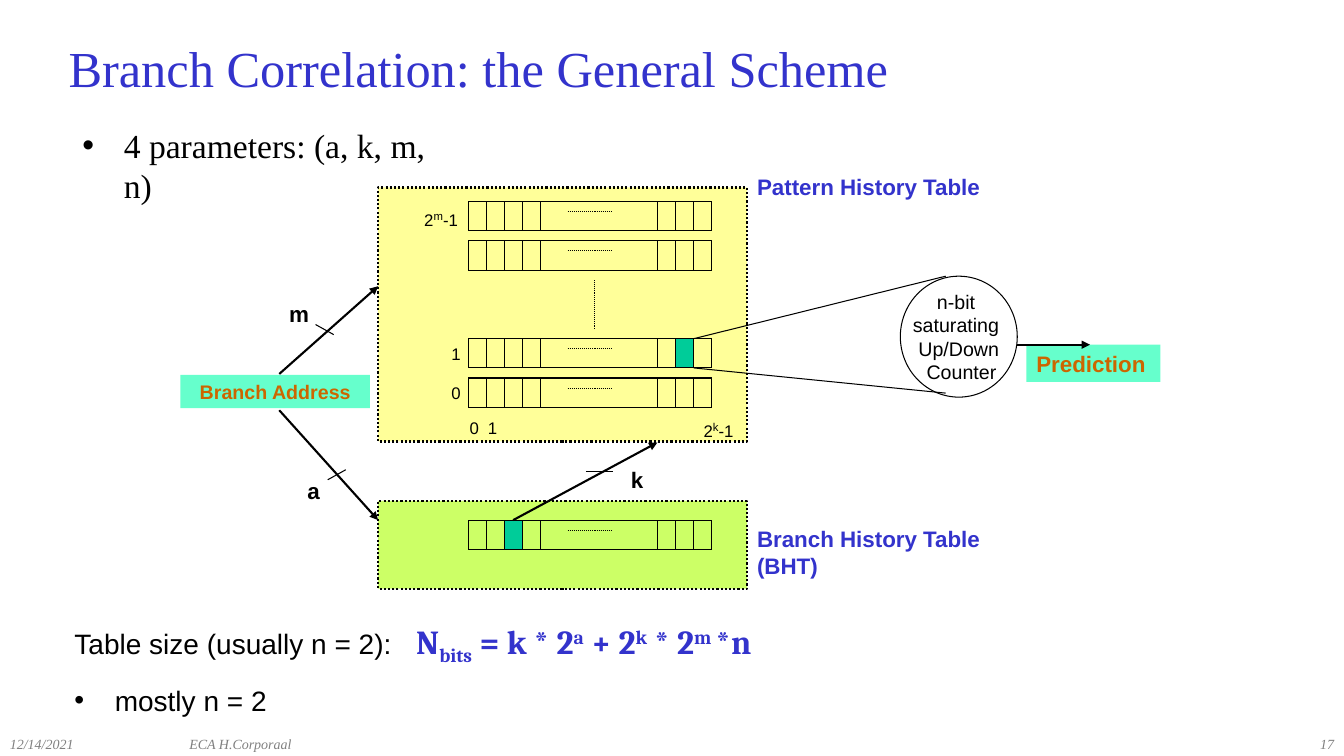
from collections import namedtuple
from lxml.etree import SubElement
from pptx import Presentation
from pptx.dml.color import RGBColor
from pptx.enum.dml import MSO_LINE
from pptx.enum.shapes import MSO_CONNECTOR, MSO_SHAPE
from pptx.enum.text import MSO_ANCHOR, PP_ALIGN
from pptx.oxml.ns import qn
from pptx.util import Inches, Pt

Box = namedtuple("Box", "left top width height")
BLACK, BLUE, GRAY, ORANGE = "000000", "3333CC", "808080", "CC6600"
YELLOW, LIME, MINT, GREEN = "FFFF99", "CCFF66", "66FFCC", "00CC99"
ROW_WIDTH, ROW_HEIGHT = 2.41, 0.29
CELL_WIDTH = ROW_WIDTH / 13.5
CELL_OFFSETS = [CELL_WIDTH * index for index in (0, 1, 2, 3, 10.5, 11.5, 12.5)]


def color(value):
    return RGBColor.from_string(value)


def style_run(run, size, name="Arial", hue=BLACK, bold=False, italic=False, baseline=0):
    font = run.font
    font.size, font.name, font.bold, font.italic = Pt(size), name, bold, italic
    font.color.rgb = color(hue)
    if baseline:
        run._r.get_or_add_rPr().set("baseline", str(baseline * 1000))


def add_runs(paragraph, parts, size, baseline_size=None, **style):
    for text, baseline in parts:
        run = paragraph.add_run()
        run.text = text
        run_size = baseline_size if baseline and baseline_size else size
        style_run(run, run_size, baseline=baseline, **style)


def add_bullet(paragraph, margin):
    properties = paragraph._p.get_or_add_pPr()
    properties.set("marL", str(Inches(margin)))
    properties.set("indent", str(-Inches(margin)))
    SubElement(properties, qn("a:buFont"), typeface="Arial")
    SubElement(properties, qn("a:buChar"), char="•")


def add_text(slide, box, parts, size, align=PP_ALIGN.LEFT, **style):
    text_box = slide.shapes.add_textbox(*map(Inches, box))
    text_frame = text_box.text_frame
    text_frame.word_wrap = True
    paragraph = text_frame.paragraphs[0]
    paragraph.alignment = align
    if isinstance(parts, str):
        parts = [(parts, 0)]
    add_runs(paragraph, parts, size, **style)
    return text_frame


def add_block(slide, box, fill=None, line_width=0.75, dash=None, kind=MSO_SHAPE.RECTANGLE):
    shape = slide.shapes.add_shape(kind, *map(Inches, box))
    shape.shadow.inherit = False
    if fill:
        shape.fill.solid()
        shape.fill.fore_color.rgb = color(fill)
    else:
        shape.fill.background()
    if line_width:
        shape.line.color.rgb = color(BLACK)
        shape.line.width = Pt(line_width)
        shape.line.dash_style = dash
    else:
        shape.line.fill.background()
    return shape


def add_line(slide, start, end, width=0.75, dash=None, arrow=False):
    points = map(Inches, (*start, *end))
    connector = slide.shapes.add_connector(MSO_CONNECTOR.STRAIGHT, *points)
    connector.line.color.rgb = color(BLACK)
    connector.line.width = Pt(width)
    connector.line.dash_style = dash
    if arrow:
        SubElement(connector.line._get_or_add_ln(), qn("a:tailEnd"), type="triangle")
    SubElement(connector._element.spPr, qn("a:effectLst"))


def add_tag(slide, box, text, size, align=PP_ALIGN.LEFT):
    tag = add_block(slide, box, MINT, line_width=0)
    tag.text_frame.text = text
    paragraph = tag.text_frame.paragraphs[0]
    paragraph.alignment = align
    style_run(paragraph.runs[0], size, hue=ORANGE, bold=True)


def add_row(slide, left, top, marked=None):
    for index, offset in enumerate(CELL_OFFSETS):
        fill = GREEN if index == marked else None
        add_block(slide, Box(left + offset, top, CELL_WIDTH, ROW_HEIGHT), fill)
    add_block(slide, Box(left, top, ROW_WIDTH, ROW_HEIGHT))
    dots = top + 0.1
    add_line(slide, (left + 0.98, dots), (left + 1.43, dots), dash=MSO_LINE.ROUND_DOT)


def add_title(slide, box):
    title = slide.shapes.title
    title.left, title.top, title.width, title.height = map(Inches, box)
    title.text_frame.text = "Branch Correlation: the General Scheme"
    title.text_frame.vertical_anchor = MSO_ANCHOR.MIDDLE
    paragraph = title.text_frame.paragraphs[0]
    paragraph.alignment = PP_ALIGN.LEFT
    style_run(paragraph.runs[0], 36, "Times New Roman", BLUE)


def add_footer(slide, box):
    style = dict(size=10, name="Times New Roman", hue=GRAY, italic=True)
    left, top, width, height = box
    add_text(slide, Box(left, top, 1.78, height), "12/14/2021", **style)
    add_text(slide, Box(left + 1.78, top, 4.22, height), "ECA H.Corporaal", **style)
    number = Box(left + width - 2.78, top, 2.78, height)
    add_text(slide, number, "17", align=PP_ALIGN.RIGHT, **style)


def add_parameters(slide, box):
    text_frame = add_text(slide, box, "4 parameters: (a, k, m, n)", 24, name="Times New Roman")
    add_bullet(text_frame.paragraphs[0], 0.41)


def add_table_size(slide, box):
    text_frame = add_text(slide, box, "Table size (usually n = 2):\t", 20)
    formula = text_frame.paragraphs[0]
    tabs = SubElement(formula._p.get_or_add_pPr(), qn("a:tabLst"))
    SubElement(tabs, qn("a:tab"), pos=str(Inches(3.39)), algn="l")
    parts = [("N", 0), ("bits", -25), (" = k * 2", 0), ("a", 30), (" + 2", 0),
             ("k", 30), (" * 2", 0), ("m ", 30), ("*n", 0)]
    add_runs(formula, parts, 24, name="Cambria", hue=BLUE, bold=True)
    remark = text_frame.add_paragraph()
    remark.text = "mostly n = 2"
    remark.space_before = Pt(12)
    style_run(remark.runs[0], 20)
    add_bullet(remark, 0.4)


def add_history_table(slide, box):
    left, top, width, height = box
    add_block(slide, box, LIME, 1.5, MSO_LINE.ROUND_DOT)
    add_row(slide, left + 0.9, top + 0.19, marked=2)
    label = Box(left + width, top + 0.19, 2.95, 0.64)
    add_text(slide, label, "Branch History Table (BHT)", 16, hue=BLUE, bold=True)


def add_pattern_table(slide, box):
    left, top, width, height = box
    add_block(slide, box, YELLOW, 1.5, MSO_LINE.ROUND_DOT)
    for offset, marked in ((0.14, None), (0.53, None), (1.5, 5), (1.89, None)):
        add_row(slide, left + 0.9, top + offset, marked)
    middle = left + 2.15
    add_line(slide, (middle, top + 1.4), (middle, top + 0.92), dash=MSO_LINE.ROUND_DOT)
    dots = top + 1.79
    add_line(slide, (left + 2.06, dots), (left + 2.5, dots), dash=MSO_LINE.ROUND_DOT)
    for text, across, down in (("0", 0.81, 2.24), ("1", 0.99, 2.24),
                               ("0", 0.63, 1.89), ("1", 0.63, 1.5)):
        add_text(slide, Box(left + across, top + down, 0.27, 0.3), text, 12)
    for power, across, down, align in (("k", 3.13, 2.24, PP_ALIGN.LEFT),
                                       ("m", 0.27, 0.14, PP_ALIGN.RIGHT)):
        parts = [("2", 0), (power, 30), ("-1", 0)]
        add_text(slide, Box(left + across, top + down, 0.62, 0.3), parts, 12, align, baseline_size=14)
    label = Box(left + width, top - 0.19, 2.95, 0.37)
    add_text(slide, label, "Pattern History Table", 16, hue=BLUE, bold=True)


def add_counter(slide, box):
    left, top, width, height = box
    circle = add_block(slide, box, kind=MSO_SHAPE.OVAL)
    circle.text_frame.text = "n-bit \nsaturating \nUp/Down\n Counter"
    circle.text_frame.word_wrap = False
    circle.text_frame.vertical_anchor = MSO_ANCHOR.MIDDLE
    for paragraph in circle.text_frame.paragraphs:
        paragraph.alignment = PP_ALIGN.CENTER
        style_run(paragraph.runs[0], 14)
    add_tag(slide, Box(left + 1.25, top + 0.68, 1.33, 0.37), "Prediction", 16)
    add_line(slide, (left - 2.05, top + 0.62), (left + 0.45, top))
    add_line(slide, (left - 2.05, top + 0.91), (left + 0.45, top + 1.16))
    exit_level = top + 0.68
    add_line(slide, (left + width, exit_level), (left + 1.88, exit_level), 1.5, arrow=True)


def add_index_arrow(slide, start, end, tick_start, tick_end, text, label_corner):
    add_line(slide, start, end, 1.5, arrow=True)
    add_line(slide, tick_start, tick_end)
    add_text(slide, Box(*label_corner, 0.45, 0.37), text, 16, bold=True)


def add_address(slide, box):
    left, top, width, height = box
    add_tag(slide, box, "Branch Address", 14, PP_ALIGN.CENTER)
    middle, edge = left + 0.98, left + 1.96
    add_index_arrow(slide, (middle, top + 0.35), (edge, top + 1.44), (left + 1.64, top + 0.94),
                    (left + 1.46, top + 1.04), "a", (left + 1.16, top + 0.96))
    add_index_arrow(slide, (middle, top - 0.01), (edge, top - 0.88), (left + 1.34, top - 0.5),
                    (left + 1.52, top - 0.4), "m", (left + 0.98, top - 0.79))


def main():
    presentation = Presentation()
    presentation.slide_width, presentation.slide_height = Inches(13.33), Inches(7.5)
    slide = presentation.slides.add_slide(presentation.slide_layouts[5])
    add_title(slide, Box(0.58, 0.25, 12.44, 0.83))
    add_footer(slide, Box(0, 7.25, 13.33, 0.25))
    add_table_size(slide, Box(0.64, 6.11, 9.33, 1))
    add_history_table(slide, Box(3.75, 4.97, 3.66, 0.87))
    add_pattern_table(slide, Box(3.75, 1.86, 3.66, 2.52))
    add_counter(slide, Box(8.93, 2.74, 1.16, 1.2))
    add_address(slide, Box(1.79, 3.72, 1.88, 0.33))
    add_index_arrow(slide, (5.09, 5.16), (6.52, 4.39), (5.81, 4.68), (6.08, 4.68), "k", (6.16, 4.58))
    add_parameters(slide, Box(0.72, 1.19, 3.83, 0.5))
    presentation.save("out.pptx")


if __name__ == "__main__":
    main()
